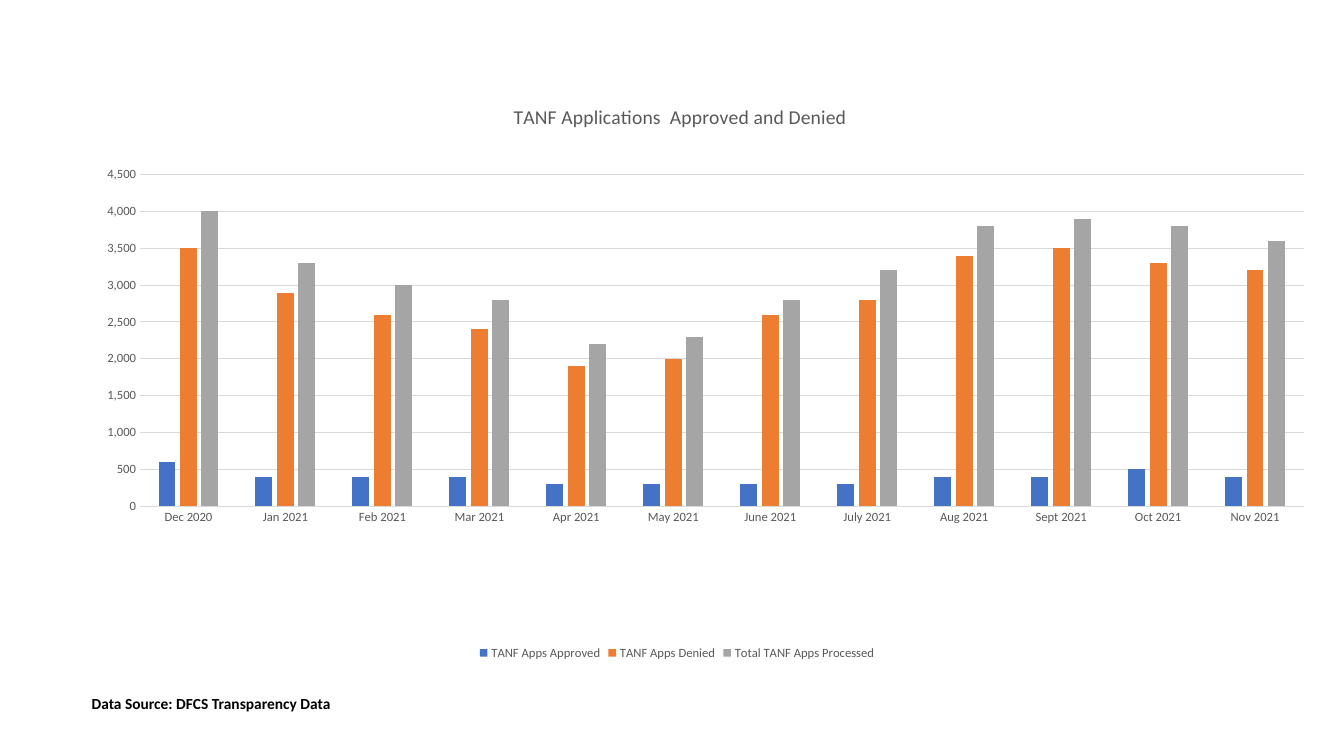
from dataclasses import dataclass

from lxml import etree
from pptx import Presentation
from pptx import util as u
from pptx.chart.data import CategoryChartData
from pptx.dml.color import RGBColor
from pptx.enum import chart as ch
from pptx.enum import text
from pptx.oxml import ns


@dataclass(frozen=True)
class Theme:
    face: str = "Calibri"
    ink: str = "000000"
    grey: str = "595959"
    rule: str = "D9D9D9"
    bars: tuple = ("4472C4", "ED7D31", "A5A5A5")
    title: int = 14
    note: int = 11
    base: int = 10
    label: int = 9


MONTHS = ["Dec 2020", "Jan 2021", "Feb 2021", "Mar 2021", "Apr 2021", "May 2021",
          "June 2021", "July 2021", "Aug 2021", "Sept 2021", "Oct 2021", "Nov 2021"]
COUNTS = {
    "TANF Apps Approved":
        [600, 400, 400, 400, 300, 300, 300, 300, 400, 400, 500, 400],
    "TANF Apps Denied":
        [3500, 2900, 2600, 2400, 1900, 2000, 2600, 2800, 3400, 3500, 3300, 3200],
    "Total TANF Apps Processed":
        [4000, 3300, 3000, 2800, 2200, 2300, 2800, 3200, 3800, 3900, 3800, 3600],
}


class Deck:
    def __init__(self, theme):
        self.theme = theme
        self.show = Presentation()
        self.show.slide_width = u.Inches(13.33)
        self.show.slide_height = u.Inches(7.5)
        self.slide = self.show.slides.add_slide(self.show.slide_layouts[6])

    def font(self, font, size, color, bold=False):
        font.name = self.theme.face
        font.size = u.Pt(size)
        font.bold = bold
        font.color.rgb = RGBColor.from_string(color)

    def line(self, line):
        line.color.rgb = RGBColor.from_string(self.theme.rule)
        line.width = u.Pt(0.75)

    def place(self, part, **marks):
        old = part.find(ns.qn("c:layout"))
        if old is None:
            old = etree.Element(ns.qn("c:layout"))
            first = part.find(ns.qn("c:tx"))
            part.insert(0 if first is None else 1, old)
        for child in list(old):
            old.remove(child)
        manual = etree.SubElement(old, ns.qn("c:manualLayout"))
        for name, value in marks.items():
            etree.SubElement(manual, ns.qn(f"c:{name}")).set("val", str(value))

    def note(self, words, box):
        frame = self.slide.shapes.add_textbox(*map(u.Inches, box)).text_frame
        frame.word_wrap = True
        frame.auto_size = text.MSO_AUTO_SIZE.SHAPE_TO_FIT_TEXT
        run = frame.paragraphs[0].add_run()
        run.text = words
        self.font(run.font, self.theme.note, self.theme.ink, True)

    def title(self, chart, words):
        chart.has_title = True
        title = chart.chart_title
        run = title.text_frame.paragraphs[0].add_run()
        run.text = words
        self.font(run.font, self.theme.title, self.theme.grey)
        title.include_in_layout = False
        self.place(title._element, xMode="edge", yMode="edge", x=0.375, y=0.04)

    def axes(self, chart):
        months, scale = chart.category_axis, chart.value_axis
        for axis in (months, scale):
            axis.major_tick_mark = axis.minor_tick_mark = ch.XL_TICK_MARK.NONE
            self.font(axis.tick_labels.font, self.theme.label, self.theme.grey)
        self.line(months.format.line)
        scale.format.line.fill.background()
        scale.has_major_gridlines = True
        self.line(scale.major_gridlines.format.line)
        scale.minimum_scale, scale.maximum_scale = 0, 4500
        scale.major_unit = 500
        scale.tick_labels.number_format = "#,##0"
        scale.tick_labels.number_format_is_linked = False

    def columns(self, head, cats, sets, box):
        data = CategoryChartData(number_format="#,##0")
        data.categories = cats
        for name, vals in sets.items():
            data.add_series(name, vals)
        chart = self.slide.shapes.add_chart(
            ch.XL_CHART_TYPE.COLUMN_CLUSTERED, *map(u.Inches, box), data).chart
        self.font(chart.font, self.theme.base, self.theme.ink)
        self.title(chart, head)
        self.axes(chart)
        plot = chart.plots[0]
        plot.gap_width, plot.overlap = 219, -27
        plot.vary_by_categories = False
        for bars, color in zip(plot.series, self.theme.bars):
            bars.format.fill.solid()
            bars.format.fill.fore_color.rgb = RGBColor.from_string(color)
        chart.has_legend = True
        chart.legend.position = ch.XL_LEGEND_POSITION.BOTTOM
        chart.legend.include_in_layout = False
        self.font(chart.legend.font, self.theme.label, self.theme.grey)
        area = chart._chartSpace.find(".//" + ns.qn("c:plotArea"))
        self.place(area, layoutTarget="inner", xMode="edge", yMode="edge",
                   x=0.098, y=0.167, w=0.871, h=0.564)


def main():
    deck = Deck(Theme())
    deck.note("Data Source: DFCS Transparency Data", (0.81, 6.84, 12.52, 0.29))
    deck.columns("TANF Applications  Approved and Denied", MONTHS, COUNTS,
                 (0.09, 0.76, 13.25, 5.83))
    deck.show.save("out.pptx")


if __name__ == "__main__":
    main()
